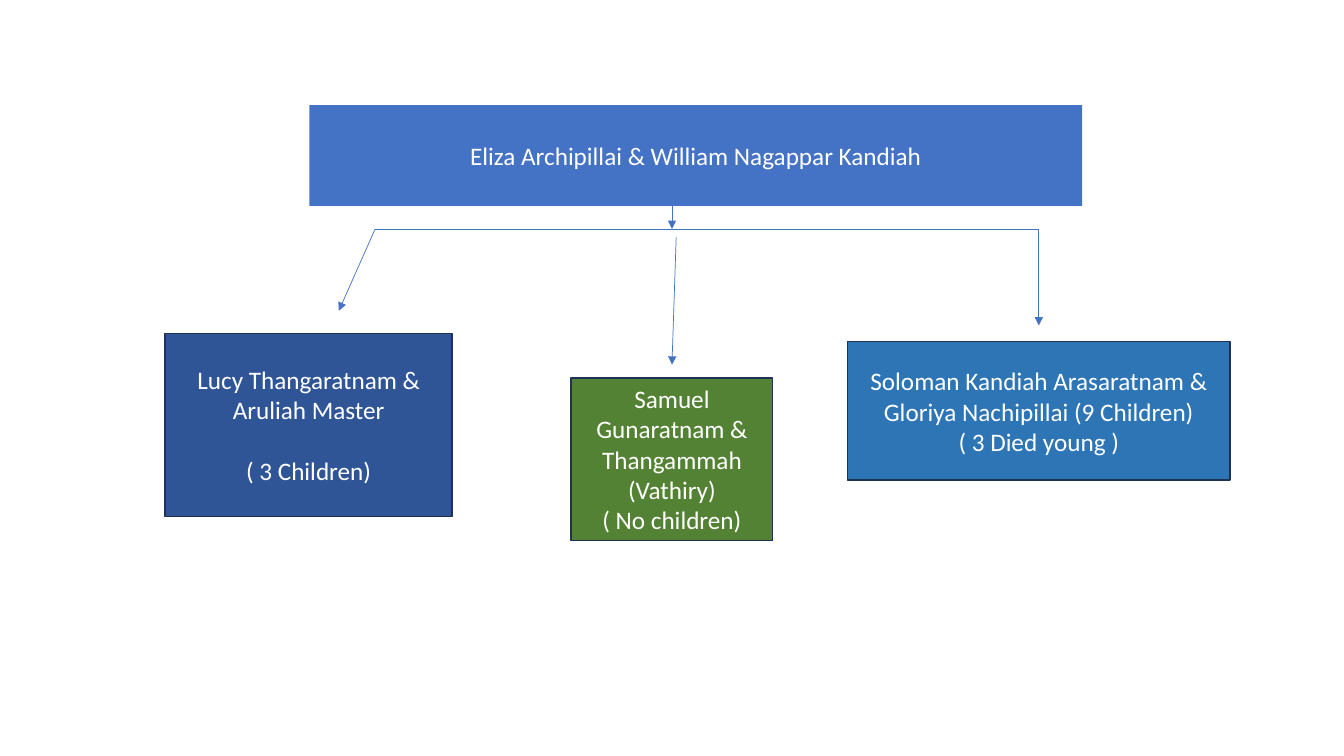
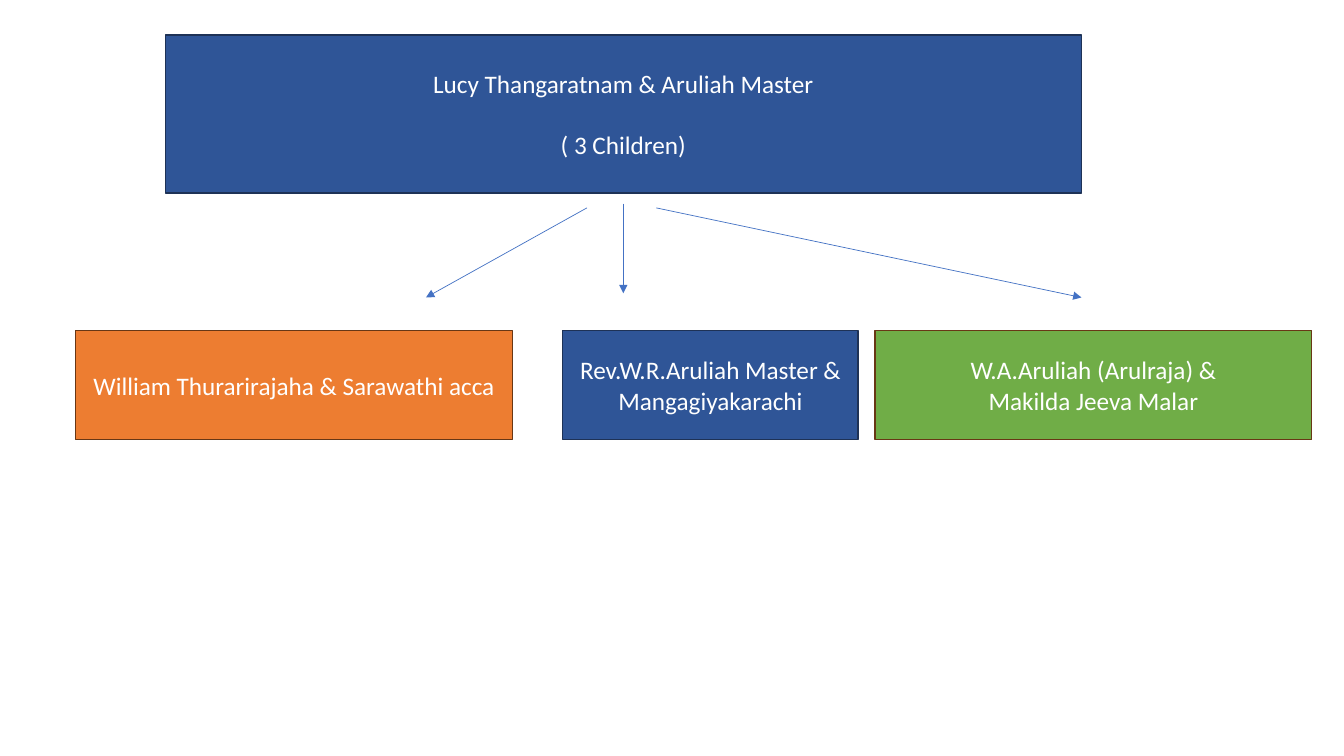
"""Build a two-slide family tree."""
import lxml.etree
import pptx
import pptx.dml.color
import pptx.enum.shapes
import pptx.enum.text
import pptx.oxml.ns
import pptx.util

COLORS = {
    "blue": "4472C4",
    "navy": "2F5597",
    "sky": "2E75B6",
    "forest": "548235",
    "orange": "ED7D31",
    "green": "70AD47",
    "white": "FFFFFF",
    "navy_edge": "1E3256",
    "brown_edge": "683715",
}
FONT = "Calibri"
TEXT_SIZE = 18
BLANK_LINE = 22
TITLE_ONLY = 5
Pt = pptx.util.Pt


def rgb(color):
    """Return the named colour."""
    return pptx.dml.color.RGBColor.from_string(COLORS[color])


def write_text(frame, lines, size=TEXT_SIZE, color="white", gap=0):
    """Write centred lines, with a gap above each line after the first."""
    frame.word_wrap = True
    frame.auto_size = pptx.enum.text.MSO_AUTO_SIZE.NONE
    frame.vertical_anchor = pptx.enum.text.MSO_ANCHOR.MIDDLE
    for index, line in enumerate(lines):
        paragraph = frame.add_paragraph() if index else frame.paragraphs[0]
        paragraph.alignment = pptx.enum.text.PP_ALIGN.CENTER
        paragraph.space_before = Pt(gap if index else 0)
        run = paragraph.add_run()
        run.text = line
        run.font.name = FONT
        run.font.size = Pt(size)
        run.font.color.rgb = rgb(color)


def style_box(box, fill, edge):
    """Fill a box and draw its edge, if it has one."""
    box.fill.solid()
    box.fill.fore_color.rgb = rgb(fill)
    if edge:
        box.line.color.rgb = rgb(edge)
        box.line.width = Pt(1)
    else:
        box.line.fill.background()


def add_parents(slide, bounds, lines, fill, edge=None, gap=0):
    """Place the parents in the title at the top of the tree."""
    parents = slide.shapes.title
    parents.left, parents.top, parents.width, parents.height = map(Pt, bounds)
    style_box(parents, fill, edge)
    write_text(parents.text_frame, lines, gap=gap)


def add_child(slide, bounds, lines, fill, edge="navy_edge", gap=0):
    """Place the box of one child and spouse."""
    child = slide.shapes.add_shape(
        pptx.enum.shapes.MSO_SHAPE.RECTANGLE, *map(Pt, bounds))
    child.shadow.inherit = False
    style_box(child, fill, edge)
    write_text(child.text_frame, lines, gap=gap)


def add_branch(slide, start, end, arrow=True):
    """Draw a thin line of descent, with an arrowhead unless told otherwise."""
    branch = slide.shapes.add_connector(
        pptx.enum.shapes.MSO_CONNECTOR.STRAIGHT, *map(Pt, (*start, *end)))
    branch.line.color.rgb = rgb("blue")
    branch.line.width = Pt(0.5)
    if arrow:
        lxml.etree.SubElement(branch.line._get_or_add_ln(),
                              pptx.oxml.ns.qn("a:tailEnd"), type="triangle")
    lxml.etree.SubElement(branch._element.spPr,
                          pptx.oxml.ns.qn("a:effectLst"))


def build_grandparents(slide, left, top, width, height):
    """Place the first couple in the given box, with their children below."""
    add_parents(slide, (left, top, width, height),
                ["Eliza Archipillai & William Nagappar Kandiah"], "blue")
    add_child(slide, (left - 103, top + 163, 205, 131),
              ["Lucy Thangaratnam & Aruliah Master", "( 3 Children)"],
              "navy", gap=BLANK_LINE)
    add_child(slide, (left + 384.5, top + 169, 273, 99),
              ["Soloman Kandiah Arasaratnam & Gloriya Nachipillai (9 Children)",
               "( 3 Died young )"], "sky")
    add_child(slide, (left + 187, top + 195, 144, 116),
              ["Samuel Gunaratnam & Thangammah (Vathiry)", "( No children)"],
              "forest")

    bar = top + height + 16.5
    bar_start, stem, bar_end = left + 47, left + 259, left + 521
    add_branch(slide, (stem, top + height), (stem, bar))
    add_branch(slide, (bar_end, bar), (bar_start, bar), arrow=False)
    add_branch(slide, (bar_start, bar), (bar_start - 26, bar + 58.5))
    add_branch(slide, (stem + 3, bar + 6), (stem, bar + 97))
    add_branch(slide, (bar_end, bar), (bar_end, bar + 69))


def build_lucy_family(slide, left, top, width, height):
    """Place Lucy's couple in the given box, with their children below."""
    add_parents(slide, (left, top, width, height),
                ["Lucy Thangaratnam & Aruliah Master", "( 3 Children)"],
                "navy", edge="navy_edge", gap=BLANK_LINE)
    children = [
        (-64, 312, ["William Thurarirajaha & Sarawathi acca"],
         "orange", "brown_edge"),
        (284, 211, ["Rev.W.R.Aruliah Master & Mangagiyakarachi"],
         "navy", "navy_edge"),
        (507, 312, ["W.A.Aruliah (Arulraja) &", "Makilda Jeeva Malar"],
         "green", "brown_edge"),
    ]
    for offset, child_width, lines, fill, edge in children:
        add_child(slide, (left + offset, top + 211, child_width, 78),
                  lines, fill, edge)

    middle, bottom = left + width / 2, top + height
    for start, end, drop in [(-26, -141, 10.5), (0, 0, 7.5),
                             (23.5, width / 2, 10.5)]:
        add_branch(slide, (middle + start, bottom + drop),
                   (middle + end, bottom + drop + 64))


def main():
    """Build and save the presentation."""
    deck = pptx.Presentation()
    deck.slide_width, deck.slide_height = Pt(960), Pt(540)
    for build, bounds in [(build_grandparents, (221, 75, 552, 72)),
                          (build_lucy_family, (118, 25, 654.5, 113))]:
        slide = deck.slides.add_slide(deck.slide_layouts[TITLE_ONLY])
        build(slide, *bounds)
    deck.save("out.pptx")


if __name__ == "__main__":
    main()
